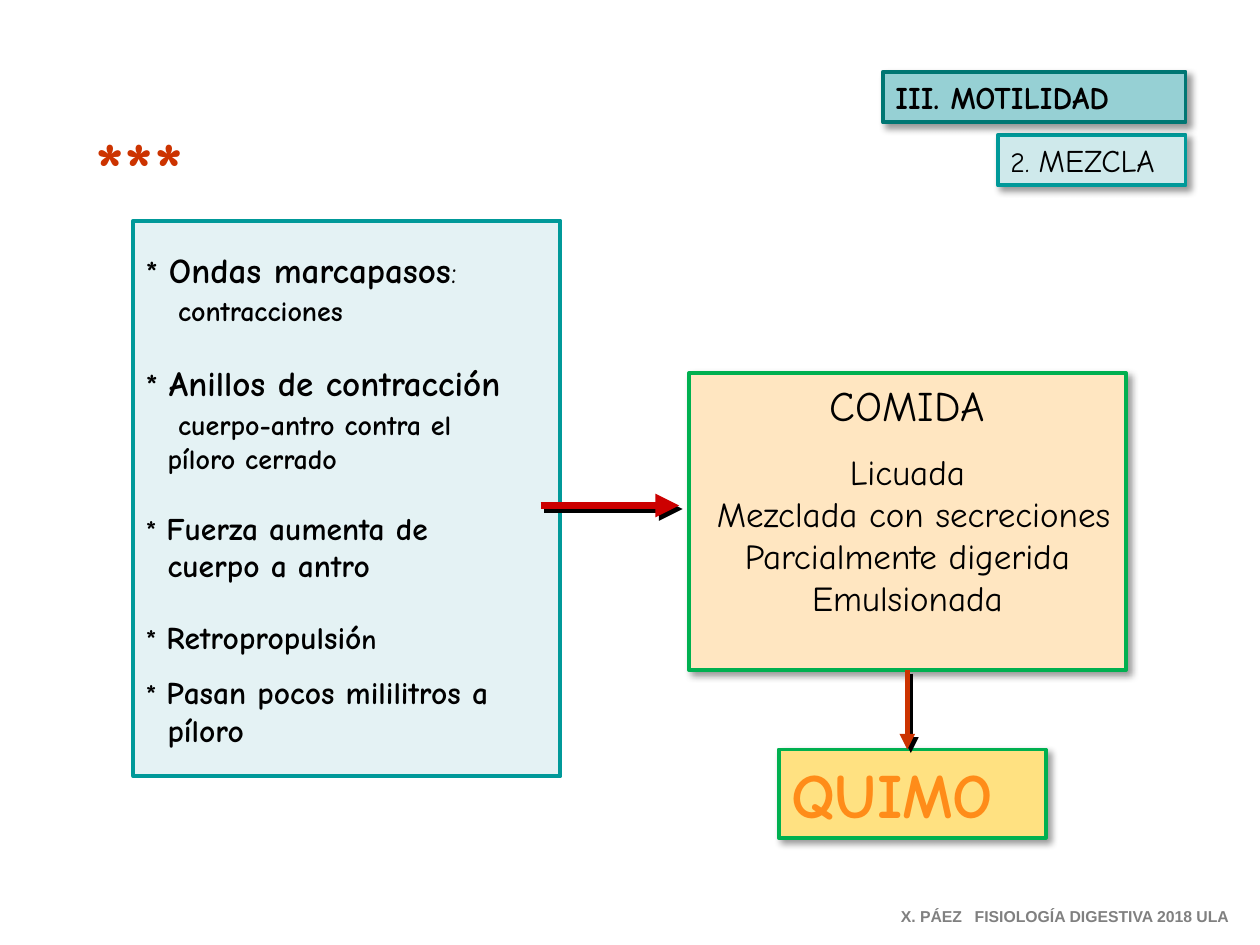
from dataclasses import dataclass
from typing import NamedTuple

from lxml.etree import SubElement
from pptx import Presentation
from pptx.dml.color import RGBColor
from pptx.enum.shapes import MSO_CONNECTOR, MSO_SHAPE
from pptx.enum.text import MSO_ANCHOR, PP_ALIGN
from pptx.oxml.ns import qn
from pptx.util import Cm, Pt

COLORS = {
    "text": "000000", "shadow": "000000", "star": "CC3300", "star_shadow": "808080",
    "teal": "009999", "dark_teal": "007673", "panel": "E4F2F4",
    "topic": "CFE9EB", "chapter": "96D0D4", "green": "00B050",
    "food": "FFE6C1", "chyme": "FFE181", "orange": "FF8C19",
    "red": "CC0000", "footer": "808080",
}
FONT = "Comic Neue"


class Run(NamedTuple):
    text: str
    size: float
    bold: bool = False
    color: str = "text"
    font: str = FONT


class Para(NamedTuple):
    runs: list[Run]
    before: float = 0   # points
    margin: float = 0   # cm
    centered: bool = False
    tab: float = 0      # cm


class Shadow(NamedTuple):
    alpha: int
    blur: float
    distance: float
    color: str = "shadow"


SOFT = Shadow(40, 4, 3)
HARD = Shadow(100, 0, 2.8)


@dataclass
class Box:
    left: float
    top: float
    width: float
    height: float
    paras: list[Para]
    fill: str = ""
    line: str = ""
    shadow: Shadow | None = None
    inset_top: float = 0.13


@dataclass
class Arrow:
    start: tuple[float, float]
    end: tuple[float, float]
    color: str
    width: float


def rgb(name: str) -> RGBColor:
    return RGBColor.from_string(COLORS[name])


def add_shadow(effects, shadow: Shadow) -> None:
    outer = SubElement(effects, qn("a:outerShdw"), blurRad=str(Pt(shadow.blur)),
                       dist=str(Pt(shadow.distance)), dir=str(45 * 60000),
                       algn="ctr", rotWithShape="0")
    color = SubElement(outer, qn("a:srgbClr"), val=COLORS[shadow.color])
    SubElement(color, qn("a:alpha"), val=str(shadow.alpha * 1000))


def write_para(paragraph, para: Para) -> None:
    props = paragraph._p.get_or_add_pPr()
    if para.margin:
        props.set("marL", str(Cm(para.margin)))
        props.set("indent", "0")
    if para.tab:
        tabs = SubElement(props, qn("a:tabLst"))
        SubElement(tabs, qn("a:tab"), pos=str(Cm(para.tab)), algn="l")
    paragraph.alignment = PP_ALIGN.CENTER if para.centered else PP_ALIGN.LEFT
    if para.before:
        paragraph.space_before = Pt(para.before)
    for item in para.runs:
        run = paragraph.add_run()
        run.text = item.text
        run.font.size = Pt(item.size)
        run.font.bold = item.bold
        run.font.name = item.font
        run.font.color.rgb = rgb(item.color)


def draw_box(slide, box: Box):
    place = [Cm(v) for v in (box.left, box.top, box.width, box.height)]
    if box.fill:
        shape = slide.shapes.add_shape(MSO_SHAPE.RECTANGLE, *place)
        shape.fill.solid()
        shape.fill.fore_color.rgb = rgb(box.fill)
        shape.line.color.rgb = rgb(box.line)
        shape.line.width = Pt(2.25)
        shape.shadow.inherit = False
        if box.shadow:
            add_shadow(shape._element.spPr.find(qn("a:effectLst")), box.shadow)
    else:
        shape = slide.shapes.add_textbox(*place)
    frame = shape.text_frame
    frame.word_wrap = True
    frame.vertical_anchor = MSO_ANCHOR.TOP
    frame.margin_top = Cm(box.inset_top)
    for index, para in enumerate(box.paras):
        write_para(frame.add_paragraph() if index else frame.paragraphs[0], para)
    return shape


def draw_arrow(slide, arrow: Arrow) -> None:
    ends = [Cm(v) for v in (*arrow.start, *arrow.end)]
    connector = slide.shapes.add_connector(MSO_CONNECTOR.STRAIGHT, *ends)
    connector.line.color.rgb = rgb(arrow.color)
    connector.line.width = Pt(arrow.width)
    SubElement(connector.line._ln, qn("a:tailEnd"), type="triangle")
    add_shadow(SubElement(connector._element.spPr, qn("a:effectLst")), HARD)


def point(text: str, size: float, star: float, before: float = 0, *rest: Run) -> Para:
    return Para([Run("* ", star, True), Run(text, size, True), *rest], before)


def detail(text: str, size: float, margin: float, before: float = 0) -> Para:
    return Para([Run(text, size, True)], before, margin)


def centered(text: str, size: float, before: float = 0, margin: float = 0) -> Para:
    return Para([Run(text, size)], before, margin, centered=True)


GAP = 19.4      # space between points, in points
HANG = 0.44     # continuation lines, in cm
DEEP = 0.65     # explanations under a point, in cm
RIGHT = 23.9    # right edge of both headings, in cm

mixing = Box(2.69, 4.45, 8.61, 11.2, [
    point("Ondas marcapasos", 20, 18, 0, Run(":", 18)),
    detail("contracciones", 16, DEEP, 2.3),
    point("Anillos de contracción", 20, 18, GAP),
    detail("cuerpo-antro contra el", 16, DEEP, 2.3),
    detail("píloro cerrado", 16, HANG),
    point("Fuerza aumenta de", 18, 16, GAP),
    detail("cuerpo a antro", 18, HANG),
    point("Retropropulsió", 18, 16, GAP, Run("n", 16, True)),
    point("Pasan pocos mililitros a", 18, 16, GAP / 2),
    detail("píloro", 18, HANG),
], "panel", "teal", inset_top=0.55)

food = Box(13.89, 7.52, 8.81, 5.99, [
    centered("COMIDA", 24),
    centered("Licuada", 20, before=12),
    centered("Mezclada con secreciones", 20, margin=0.25),
    centered("Parcialmente digerida", 20),
    centered("Emulsionada", 20),
], "food", "green", SOFT)

stars = Box(1.68, 2.31, 3, 2.13, [Para([Run("***", 44, True, "star")])])
chyme = Box(15.7, 15.11, 5.38, 1.78, [Para([Run("QUIMO", 36, True, "orange")])],
            "chyme", "green", SOFT)
topic = Box(RIGHT - 3.78, 2.72, 3.78, 1.02,
            [Para([Run("2. ", 16), Run("MEZCLA", 18)])], "topic", "teal", SOFT)
chapter = Box(RIGHT - 6.1, 1.45, 6.1, 1.02,
              [Para([Run("III. MOTILIDAD", 18, True)])], "chapter", "dark_teal", SOFT)
footer = Box(17.91, 18.14, 7.26, 0.64, [Para([
    Run("X. PÁEZ\t", 9, True, "footer", "Arial"),
    Run("FISIOLOGÍA DIGESTIVA 2018 ULA", 9, True, "footer", "Arial")], tab=1.49)])


def main() -> None:
    prs = Presentation()
    prs.slide_width, prs.slide_height = Cm(25.4), Cm(19.05)
    slide = prs.slides.add_slide(prs.slide_layouts[6])

    # Mixing process and its result
    draw_box(slide, mixing)
    draw_box(slide, food)

    # Stars with a text shadow
    star_run = draw_box(slide, stars).text_frame.paragraphs[0].runs[0]
    fill = star_run._r.rPr.find(qn("a:solidFill"))
    effects = SubElement(star_run._r.rPr, qn("a:effectLst"))
    fill.addnext(effects)
    add_shadow(effects, Shadow(100, 0, 2.8, "star_shadow"))

    # Flow from mixing to food to chyme
    draw_arrow(slide, Arrow((10.9, 10.19), (13.69, 10.19), "red", 4.5))
    draw_box(slide, chyme)
    draw_arrow(slide, Arrow((18.29, 13.51), (18.29, 15.11), "star", 3))

    # Headings and footer
    for label in (topic, chapter, footer):
        draw_box(slide, label)

    prs.save("out.pptx")


if __name__ == "__main__":
    main()
